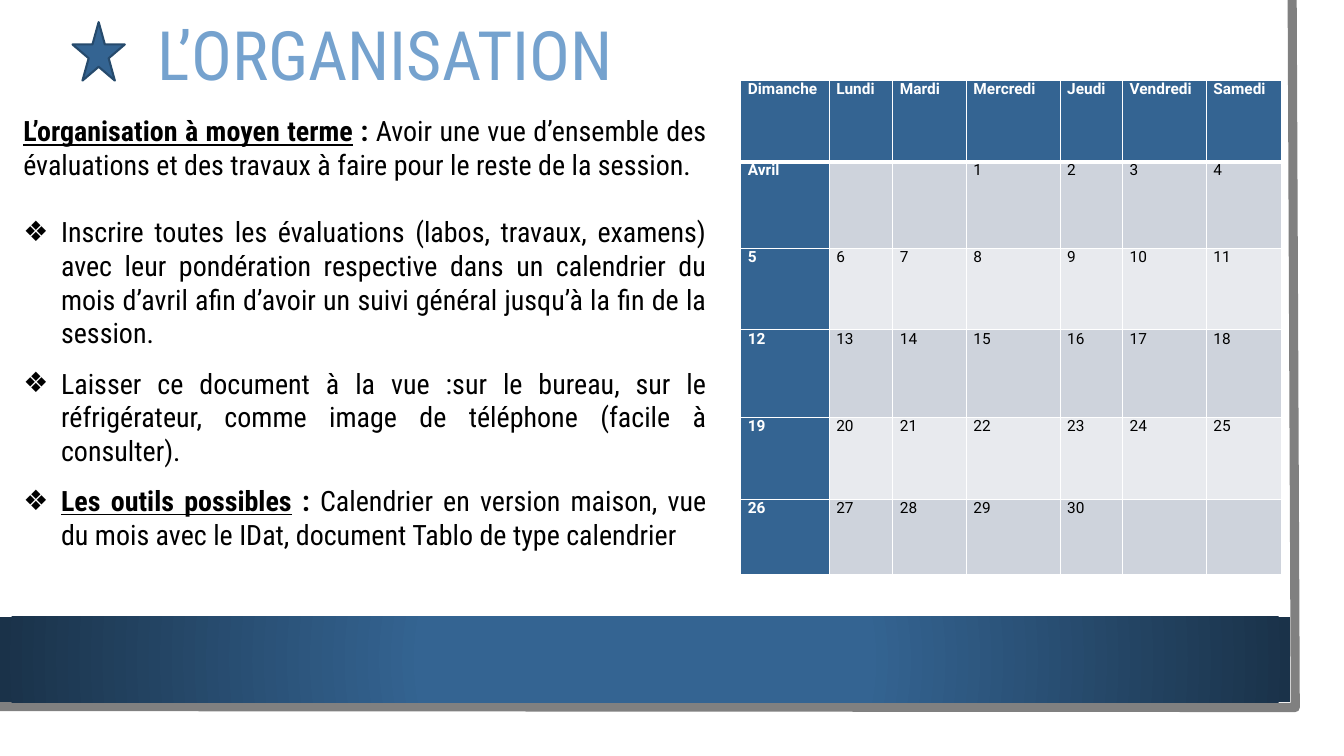
import dataclasses

import pptx
import pptx.dml.color
import pptx.enum.shapes
import pptx.enum.text
import pptx.oxml
import pptx.oxml.ns
import pptx.util
from pptx.util import Pt

RGB = pptx.dml.color.RGBColor.from_string
qn = pptx.oxml.ns.qn


@dataclasses.dataclass(frozen=True)
class Theme:
    blue: str = "346492"
    navy: str = "1A3249"
    star_edge: str = "264A6C"
    title: str = "75A2CE"
    frame: str = "808080"
    text: str = "000000"
    white: str = "FFFFFF"
    row_dark: str = "CED3DC"
    row_light: str = "E8EAEE"
    heading_font: str = "Roboto Condensed"
    table_font: str = "Roboto"
    title_size: float = 48.6
    body_size: float = 20
    table_size: float = 11


theme = Theme()


def style(font, name, size, color):
    font.name = name
    font.size = Pt(size)
    font.color.rgb = RGB(color)


def add_xml(parent, xml):
    namespace = 'xmlns:a="http://schemas.openxmlformats.org/drawingml/2006/main"'
    parent.append(pptx.oxml.parse_xml(xml.replace(" ", f" {namespace} ", 1)))


deck = pptx.Presentation()
deck.slide_width, deck.slide_height = Pt(960), Pt(540)
slide = deck.slides.add_slide(deck.slide_layouts[1])
shapes = slide.shapes

outline = shapes.build_freeform(Pt(923), Pt(0), scale=1.0)
outline.add_line_segments([(Pt(925.2), Pt(505.4)), (Pt(-2.2), Pt(504.7))], close=False)
frame = outline.convert_to_shape()
frame.shadow.inherit = False
frame.fill.background()
frame.line.color.rgb = RGB(theme.frame)
frame.line.width = Pt(6.5)

footer_band = shapes.add_shape(
    pptx.enum.shapes.MSO_SHAPE.RECTANGLE, Pt(0), Pt(440.6), Pt(921.6), Pt(61.2))
footer_band.shadow.inherit = False
footer_band.line.fill.background()
footer_band.fill.gradient()
for stop, color, position in zip(
        footer_band.fill.gradient_stops, (theme.blue, theme.navy), (0.34, 1)):
    stop.color.rgb = RGB(color)
    stop.position = position
gradient = footer_band._element.spPr.find(qn("a:gradFill"))
gradient.remove(gradient.find(qn("a:lin")))
add_xml(gradient, '<a:path path="circle">'
        '<a:fillToRect l="50000" t="50000" r="50000" b="50000"/></a:path>')

title = shapes.title
title.left, title.top, title.width, title.height = Pt(105), Pt(21), Pt(785), Pt(42)
title.text_frame.text = "L’ORGANISATION"
title.text_frame.auto_size = pptx.enum.text.MSO_AUTO_SIZE.NONE
title.text_frame.vertical_anchor = pptx.enum.text.MSO_ANCHOR.MIDDLE
heading = title.text_frame.paragraphs[0]
heading.alignment = pptx.enum.text.PP_ALIGN.LEFT
heading.line_spacing = 0.9
style(heading.font, theme.heading_font, theme.title_size, theme.title)

advice = [
    ("L’organisation à moyen terme",
     "Avoir une vue d’ensemble des évaluations et des travaux à faire pour le reste "
     "de la session.", False, 0),
    ("", "Inscrire toutes les évaluations (labos, travaux, examens) avec leur "
     "pondération respective dans un calendrier du mois d’avril afin d’avoir un suivi "
     "général jusqu’à la fin de la session.", True, 24),
    ("", "Laisser ce document à la vue :sur le bureau, sur le réfrigérateur, comme "
     "image de téléphone (facile à consulter).", True, 12),
    ("Les outils possibles",
     "Calendrier en version maison, vue du mois avec le IDat, document Tablo de type "
     "calendrier", True, 12),
]
body = slide.placeholders[1]
body.left, body.top, body.width, body.height = Pt(9.4), Pt(77.8), Pt(502.6), Pt(346.3)
body.text_frame.auto_size = pptx.enum.text.MSO_AUTO_SIZE.NONE
for index, (lead, sentence, bulleted, gap) in enumerate(advice):
    item = body.text_frame.paragraphs[0] if index == 0 else body.text_frame.add_paragraph()
    item.alignment = pptx.enum.text.PP_ALIGN.JUSTIFY
    item.space_before = Pt(gap)
    properties = item._p.get_or_add_pPr()
    properties.set("marL", str(Pt(27) if bulleted else 0))
    properties.set("indent", str(Pt(-27) if bulleted else 0))
    add_xml(properties, '<a:buChar char="❖"/>' if bulleted else "<a:buNone />")
    style(item.font, theme.heading_font, theme.body_size, theme.text)
    if lead:
        lead_run = item.add_run()
        lead_run.text = lead
        lead_run.font.bold = lead_run.font.underline = True
        colon = item.add_run()
        colon.text = " : "
        colon.font.bold = True
    item.add_run().text = sentence

star = shapes.add_shape(
    pptx.enum.shapes.MSO_SHAPE.STAR_5_POINT, Pt(51.8), Pt(15.8), Pt(37.4), Pt(41.8))
star.shadow.inherit = False
star.fill.solid()
star.fill.fore_color.rgb = RGB(theme.blue)
star.line.color.rgb = RGB(theme.star_edge)
star.line.width = Pt(1.5)

weekdays = ["Dimanche", "Lundi", "Mardi", "Mercredi", "Jeudi", "Vendredi", "Samedi"]
first_week = ["Avril", "", "", 1, 2, 3, 4]
later_weeks = [[day if day <= 30 else "" for day in range(sunday, sunday + 7)]
               for sunday in range(5, 31, 7)]
weeks = [weekdays, first_week, *later_weeks]
column_widths = [63.2, 45.4, 52.6, 67, 44.6, 59.8, 54]
row_heights = [58.3, 61.9, 58.3, 62.6, 58.3, 54]

calendar = shapes.add_table(
    len(weeks), len(weekdays), Pt(529.2), Pt(57.2),
    Pt(sum(column_widths)), Pt(sum(row_heights))).table
calendar.first_col = True
for column, width in zip(calendar.columns, column_widths):
    column.width = Pt(width)
for row, height in zip(calendar.rows, row_heights):
    row.height = Pt(height)

for r, week in enumerate(weeks):
    for c, label in enumerate(week):
        cell = calendar.cell(r, c)
        header = r == 0 or c == 0
        cell.margin_left = cell.margin_right = Pt(5)
        cell.margin_top = cell.margin_bottom = Pt(0)
        for side in "LRTB":
            thick = (r, side) in ((0, "B"), (1, "T"))
            add_xml(cell._tc.get_or_add_tcPr(),
                    f'<a:ln{side} w="{Pt(3 if thick else 1)}"><a:solidFill>'
                    f'<a:srgbClr val="{theme.white}"/></a:solidFill></a:ln{side}>')
        cell.fill.solid()
        cell.fill.fore_color.rgb = RGB(
            theme.blue if header else theme.row_dark if r % 2 else theme.row_light)
        cell.text = str(label)
        day = cell.text_frame.paragraphs[0]
        style(day.font, theme.table_font, theme.table_size,
              theme.white if header else theme.text)
        day.font.bold = header

deck.save("out.pptx")
